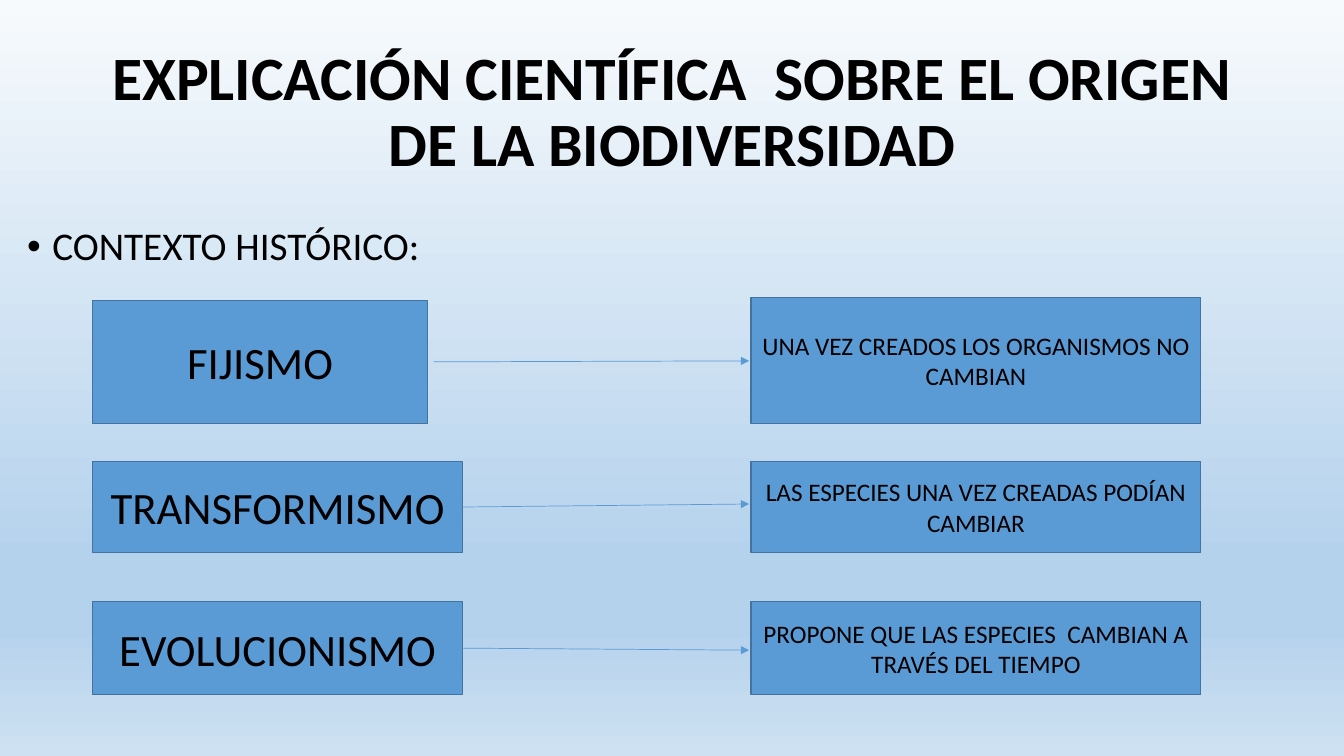
from lxml import etree
from pptx import Presentation
from pptx.dml.color import RGBColor
from pptx.enum.shapes import MSO_CONNECTOR, MSO_SHAPE
from pptx.enum.text import MSO_ANCHOR, MSO_AUTO_SIZE, PP_ALIGN
from pptx.oxml.ns import qn
from pptx.util import Inches, Pt

TITLE = "EXPLICACIÓN CIENTÍFICA  SOBRE EL ORIGEN DE LA BIODIVERSIDAD"
CONTEXT = "CONTEXTO HISTÓRICO:"
# theory, (top, width, height), meaning, (top, height), arrow end y
THEORIES = [
    ("FIJISMO", (2.98, 3.32, 1.22),
     "UNA VEZ CREADOS LOS ORGANISMOS NO CAMBIAN", (2.95, 1.25), 3.58),
    ("TRANSFORMISMO", (4.58, 3.67, 0.9),
     "LAS ESPECIES UNA VEZ CREADAS PODÍAN CAMBIAR", (4.58, 0.9), 5.0),
    ("EVOLUCIONISMO", (5.97, 3.67, 0.92),
     "PROPONE QUE LAS ESPECIES  CAMBIAN A TRAVÉS DEL TIEMPO", (5.97, 0.92), 6.45),
]
THEORY_X, MEANING_X, MEANING_W = 0.92, 7.45, 4.46
ARROW_END_X = 7.43
DETACHED = {"FIJISMO": (4.3, 3.59)}  # arrow that starts clear of its box
COLORS = {"text": "000000", "box": "5B9BD5", "border": "43739E"}
BACKGROUND = [(0, "F7FAFD"), (74, "B5D2EC"), (83, "B5D2EC"), (100, "CEE1F2")]


def rgb(name):
    return RGBColor.from_string(COLORS[name])


def style(p, size, align=None, bold=False):
    p.alignment = align
    p.font.name = "Calibri"
    p.font.size = Pt(size)
    p.font.bold = bold
    p.font.color.rgb = rgb("text")


def fill_placeholder(sp, box, text, size, anchor, align, bold=False):
    sp.left, sp.top, sp.width, sp.height = (Inches(v) for v in box)
    tf = sp.text_frame
    tf.text = text
    tf.auto_size = MSO_AUTO_SIZE.NONE
    tf.vertical_anchor = anchor
    p = tf.paragraphs[0]
    p.line_spacing = 0.9
    style(p, size, align, bold)
    return p


def add_box(s, x, y, w, h, text, size):
    sp = s.shapes.add_shape(MSO_SHAPE.RECTANGLE, Inches(x), Inches(y), Inches(w), Inches(h))
    sp.shadow.inherit = False
    sp.fill.solid()
    sp.fill.fore_color.rgb = rgb("box")
    sp.line.color.rgb = rgb("border")
    sp.line.width = Pt(1)
    tf = sp.text_frame
    tf.word_wrap = True
    tf.vertical_anchor = MSO_ANCHOR.MIDDLE
    tf.text = text
    style(tf.paragraphs[0], size, PP_ALIGN.CENTER)
    return sp


def add_arrow(s, box, start, end_y):
    x, y = start or (0, 0)
    cn = s.shapes.add_connector(MSO_CONNECTOR.STRAIGHT, Inches(x), Inches(y),
                                Inches(ARROW_END_X), Inches(end_y))
    if start is None:
        cn.begin_connect(box, 3)
    cn.line.color.rgb = rgb("box")
    cn.line.width = Pt(0.5)
    etree.SubElement(cn.line._get_or_add_ln(), qn("a:tailEnd"), type="triangle")
    etree.SubElement(cn._element.spPr, qn("a:effectLst"))


prs = Presentation()
prs.slide_width, prs.slide_height = Inches(13.33), Inches(7.5)
s = prs.slides.add_slide(prs.slide_layouts[1])

# Background gradient, top to bottom
fill = s.background.fill
fill.gradient()
fill.gradient_angle = 270
stops = s.background._cSld.find(".//" + qn("a:gsLst"))
for old in list(stops):
    stops.remove(old)
for percent, color in BACKGROUND:
    stop = etree.SubElement(stops, qn("a:gs"), pos=str(percent * 1000))
    etree.SubElement(stop, qn("a:srgbClr"), val=color)

# Title and bulleted heading
fill_placeholder(s.shapes.title, (0.92, 0.4, 11.5, 1.45), TITLE, 44,
                 MSO_ANCHOR.MIDDLE, PP_ALIGN.CENTER, bold=True)
p = fill_placeholder(s.placeholders[1], (0.17, 2.2, 11.5, 4.76), CONTEXT, 28,
                     MSO_ANCHOR.TOP, PP_ALIGN.LEFT)
p.space_before = Pt(10)
pPr = p._p.get_or_add_pPr()
pPr.set("marL", str(Inches(0.25)))
pPr.set("indent", str(-Inches(0.25)))

# Each theory points to its meaning
for theory, (y, w, h), meaning, (meaning_y, meaning_h), end_y in THEORIES:
    box = add_box(s, THEORY_X, y, w, h, theory, 32)
    add_arrow(s, box, DETACHED.get(theory), end_y)
    add_box(s, MEANING_X, meaning_y, MEANING_W, meaning_h, meaning, 18)

prs.save("out.pptx")
